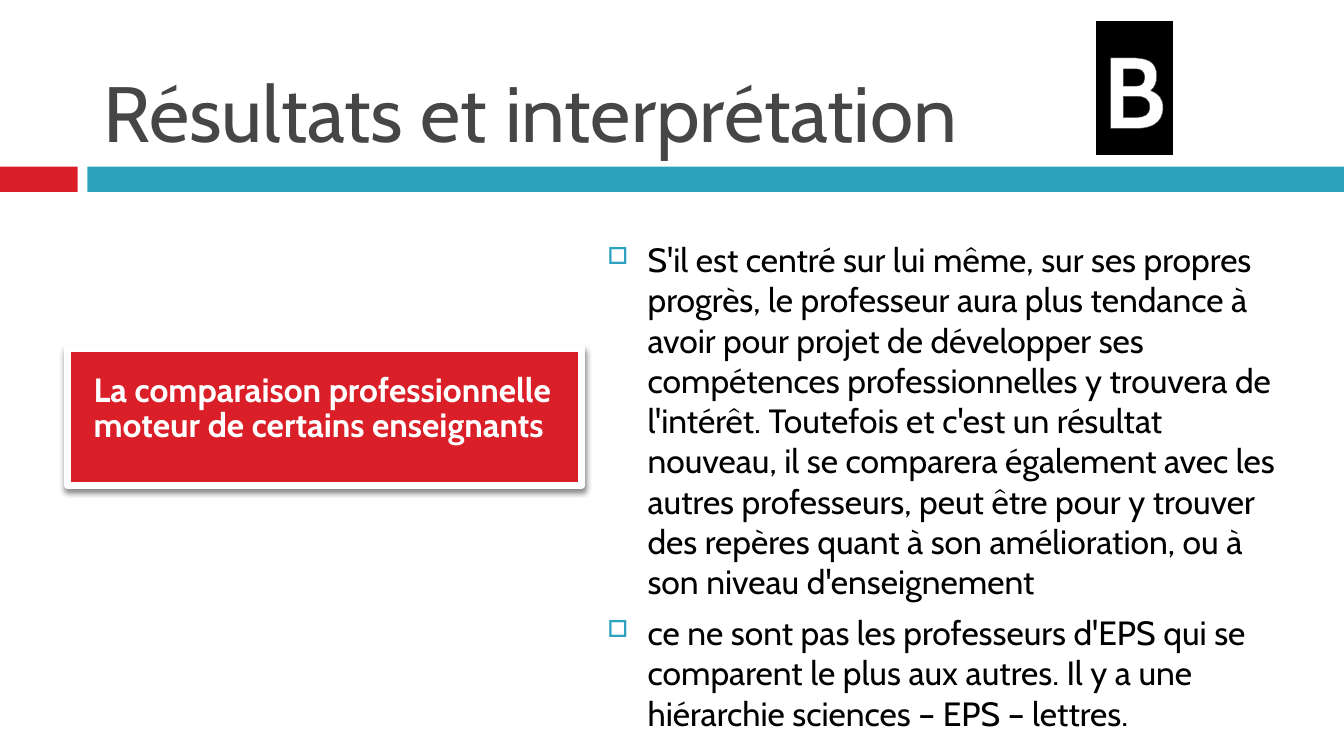
from dataclasses import dataclass
from lxml import etree
from pptx import Presentation
from pptx import util as u
from pptx.dml.color import RGBColor
from pptx.enum import shapes, text
from pptx.oxml import parse_xml
from pptx.oxml.ns import nsdecls, qn


@dataclass(frozen=True)
class Theme:
    font: str = "Cabin"
    red: str = "DA1F28"
    blue: str = "2DA2BF"
    grey: str = "464646"
    white: str = "FFFFFF"
    black: str = "000000"
    title_size: float = 42
    body_size: float = 18
    badge_size: float = 54


@dataclass(frozen=True)
class Area:
    left: float
    top: float
    width: float
    height: float

    def place(self) -> tuple:
        return tuple(u.Cm(n) for n in (self.left, self.top, self.width, self.height))


@dataclass(frozen=True)
class Block:
    area: Area
    fill: str
    border: float = 0


THEME = Theme()
BARS = (
    Block(Area(0, 3.15, 1.47, 0.48), THEME.red),
    Block(Area(1.65, 3.15, 23.75, 0.48), THEME.blue),
)
TITLE = Area(1.7, 0.33, 22.66, 2.79)
CALLOUT = Block(Area(1.27, 6.58, 9.73, 2.59), THEME.red, 3.75)
FINDINGS = Area(11.23, 4.39, 13.13, 8.69)
BADGE = Block(Area(20.68, 0.38, 1.52, 2.57), THEME.black, 1.5)
FINDING_TEXTS = (
    "S'il est centré sur lui même, sur ses propres progrès, le professeur aura plus "
    "tendance à avoir pour projet de développer ses compétences professionnelles y "
    "trouvera de l'intérêt. Toutefois et c'est un résultat nouveau, il se comparera "
    "également avec les autres professeurs, peut être pour y trouver des repères quant "
    "à son amélioration, ou à son niveau d'enseignement",
    "ce ne sont pas les professeurs d'EPS qui se comparent le plus aux autres. "
    "Il y a une hiérarchie sciences – EPS – lettres.",
)


def add_span(para, words: str, size: float, color: str, bold: bool = False):
    span = para.add_run()
    span.text = words
    span.font.name = THEME.font
    span.font.size = u.Pt(size)
    span.font.bold = bold
    span.font.color.rgb = RGBColor.from_string(color)
    return span


def add_block(page, block: Block):
    box = page.shapes.add_shape(shapes.MSO_SHAPE.RECTANGLE, *block.area.place())
    box.shadow.inherit = False
    box.fill.solid()
    box.fill.fore_color.rgb = RGBColor.from_string(block.fill)
    if block.border:
        box.line.color.rgb = RGBColor.from_string(THEME.white)
        box.line.width = u.Pt(block.border)
    else:
        box.line.fill.background()
    return box


def add_shadow(box) -> None:
    effects = box._element.spPr.find(qn("a:effectLst"))
    effects.append(parse_xml(
        f'<a:outerShdw {nsdecls("a")} blurRad="{u.Pt(3)}" dist="{u.Pt(2.4)}" '
        f'dir="5400000" algn="ctr" rotWithShape="0"><a:srgbClr val="{THEME.black}">'
        '<a:alpha val="45000"/></a:srgbClr></a:outerShdw>'))


def add_bullet(para) -> None:
    props = para._p.get_or_add_pPr()
    props.set("marL", str(u.Cm(0.76)))
    props.set("indent", str(-u.Cm(0.76)))
    color = etree.SubElement(props, qn("a:buClr"))
    etree.SubElement(color, qn("a:srgbClr"), val=THEME.blue)
    etree.SubElement(props, qn("a:buSzPct"), val="70000")
    etree.SubElement(props, qn("a:buChar"), char="□")


def add_title(page) -> None:
    title = page.shapes.title
    title.left, title.top, title.width, title.height = TITLE.place()
    frame = title.text_frame
    frame.auto_size = text.MSO_AUTO_SIZE.NONE
    frame.vertical_anchor = text.MSO_ANCHOR.BOTTOM
    para = frame.paragraphs[0]
    para.alignment = text.PP_ALIGN.LEFT
    add_span(para, "Résultats et interprétation", THEME.title_size, THEME.grey)


def add_callout(page) -> None:
    box = add_block(page, CALLOUT)
    add_shadow(box)
    frame = box.text_frame
    frame.word_wrap = True
    frame.margin_left = frame.margin_right = frame.margin_top = u.Cm(0.5)
    frame.margin_bottom = u.Cm(0.76)
    para = frame.paragraphs[0]
    para.alignment = text.PP_ALIGN.LEFT
    para.line_spacing = 0.85
    add_span(para, "La comparaison professionnelle moteur de certains enseignants",
             THEME.body_size, THEME.white, bold=True)


def add_findings(page) -> None:
    frame = page.shapes.add_textbox(*FINDINGS.place()).text_frame
    frame.word_wrap = True
    for index, words in enumerate(FINDING_TEXTS):
        para = frame.add_paragraph() if index else frame.paragraphs[0]
        para.space_before = u.Pt(5.5)
        add_bullet(para)
        add_span(para, words, THEME.body_size, THEME.black)


def add_badge(page) -> None:
    frame = add_block(page, BADGE).text_frame
    frame.word_wrap = False
    para = frame.paragraphs[0]
    para.alignment = text.PP_ALIGN.CENTER
    span = add_span(para, "B", THEME.badge_size, THEME.white, bold=True)
    span.font._element.insert(0, parse_xml(
        f'<a:ln {nsdecls("a")} w="{u.Pt(1)}"><a:solidFill>'
        f'<a:srgbClr val="{THEME.grey}"/></a:solidFill></a:ln>'))


def main() -> None:
    deck = Presentation()
    deck.slide_width, deck.slide_height = u.Cm(25.4), u.Cm(14.29)
    page = deck.slides.add_slide(deck.slide_layouts[5])
    for bar in BARS:
        add_block(page, bar)
    add_title(page)
    add_callout(page)
    add_findings(page)
    add_badge(page)
    deck.save("out.pptx")


if __name__ == "__main__":
    main()
